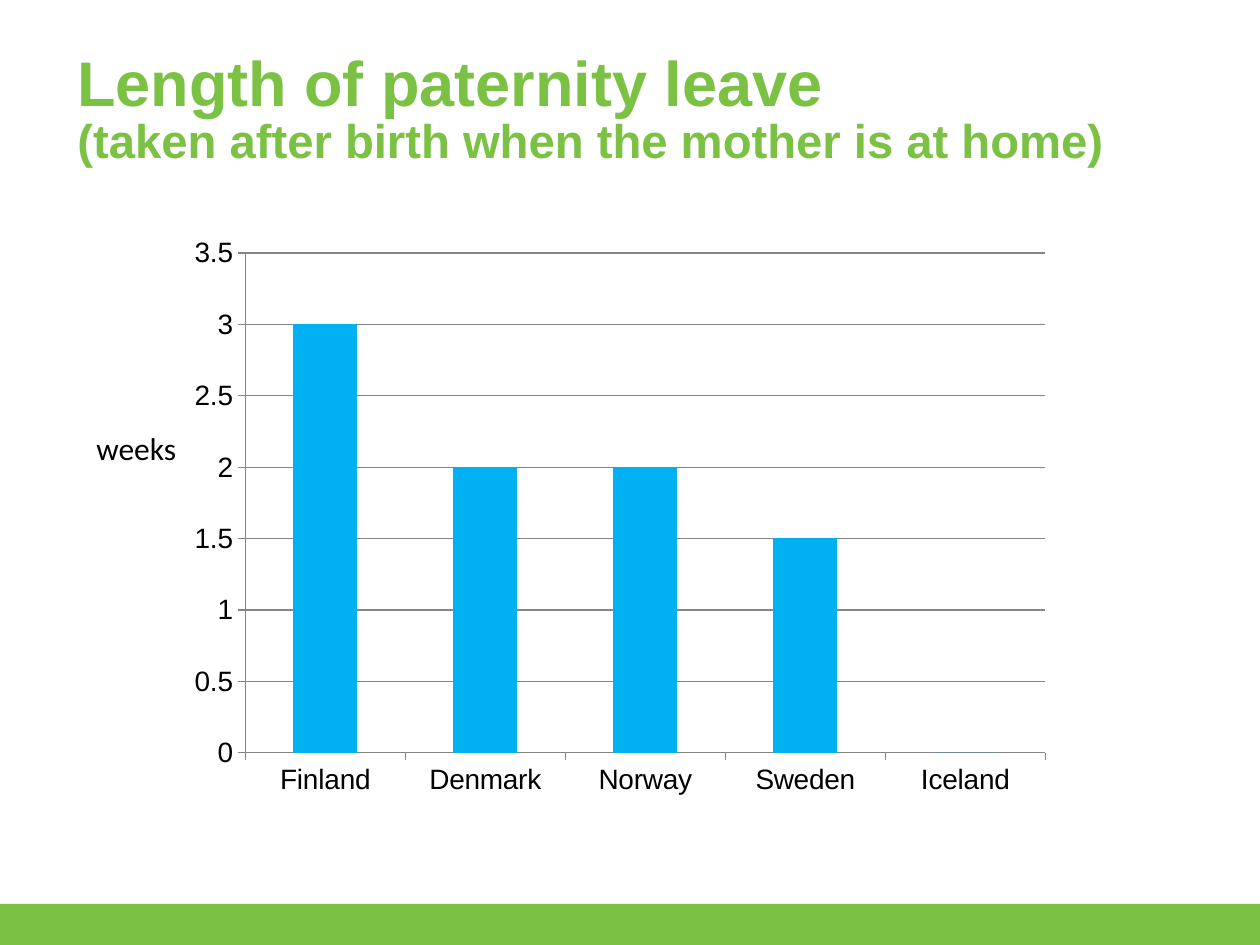
from lxml import etree
from pptx import Presentation
from pptx import util as u
from pptx.chart import data as cd
from pptx.dml.color import RGBColor
from pptx.enum import chart as ch, shapes, text
from pptx.oxml import ns

GREEN, BLUE, GREY, BLACK = "7BC143", "00B0F0", "868686", "000000"
SCALE = u.Inches(1) / 126


def px(*nums):
    """Turn pixel lengths into EMU."""
    return [u.Emu(round(n * SCALE)) for n in nums]


def color(code):
    """Return the colour for a hex string."""
    return RGBColor.from_string(code)


def style(font, size, name="Arial", tint=BLACK, bold=False):
    """Set the format of a font."""
    font.size, font.name, font.bold = u.Pt(size), name, bold
    font.color.rgb = color(tint)


def write(slide, box, lines, sizes, anchor="TOP", space=1.0, **form):
    """Add a text box whose lines form one paragraph."""
    frame = slide.shapes.add_textbox(*px(*box)).text_frame
    frame.word_wrap = True
    frame.vertical_anchor = text.MSO_ANCHOR[anchor]
    para = frame.paragraphs[0]
    para.line_spacing = space
    for i, (line, size) in enumerate(zip(lines, sizes)):
        if i:
            para.add_line_break()
        run = para.add_run()
        run.text = line
        style(run.font, size, **form)


def band(slide, box, tint):
    """Add a plain filled rectangle."""
    bar = slide.shapes.add_shape(shapes.MSO_SHAPE.RECTANGLE, *px(*box))
    bar.shadow.inherit = False
    bar.fill.solid()
    bar.fill.fore_color.rgb = color(tint)
    bar.line.fill.background()


def place(chart, **spots):
    """Fix the inner plot area as fractions of the chart."""
    plot = chart.plots[0]._element.getparent()
    for old in plot.findall(ns.qn("c:layout")):
        plot.remove(old)
    layout = etree.Element(ns.qn("c:layout"))
    plot.insert(0, layout)
    manual = etree.SubElement(layout, ns.qn("c:manualLayout"))
    parts = {"layoutTarget": "inner", "xMode": "edge", "yMode": "edge", **spots}
    for tag, val in parts.items():
        etree.SubElement(manual, ns.qn("c:" + tag)).set("val", str(val))


def rule(line):
    """Draw a chart line thin and grey."""
    line.color.rgb = color(GREY)
    line.width = u.Pt(0.75)


def columns(slide, box, cats, vals):
    """Add the column chart."""
    data = cd.CategoryChartData()
    data.categories = cats
    data.add_series("Series 1", vals)
    kind = ch.XL_CHART_TYPE.COLUMN_CLUSTERED
    chart = slide.shapes.add_chart(kind, *px(*box), data).chart
    chart.has_legend = chart.has_title = False
    style(chart.font, 10)
    plot = chart.plots[0]
    plot.gap_width = 150
    plot.vary_by_categories = False
    fill = plot.series[0].format.fill
    fill.solid()
    fill.fore_color.rgb = color(BLUE)
    for axis in (chart.category_axis, chart.value_axis):
        style(axis.tick_labels.font, 16)
        axis.major_tick_mark = ch.XL_TICK_MARK.OUTSIDE
        rule(axis.format.line)
    axis.minimum_scale, axis.maximum_scale, axis.major_unit = 0, 3.5, 0.5
    axis.has_major_gridlines = True
    rule(axis.major_gridlines.format.line)
    place(chart, x=0.076, y=0.045, w=0.903, h=0.86)


def main():
    """Build the slide."""
    deck = Presentation()
    deck.slide_width, deck.slide_height = px(1260, 945)
    slide = deck.slides.add_slide(deck.slide_layouts[6])
    band(slide, (0, 904, 1260, 41), GREEN)
    title = ["Length of paternity leave",
             "(taken after birth when the mother is at home)"]
    write(slide, (65, 35, 1131, 139), title, (36, 27), anchor="BOTTOM",
          space=0.85, tint=GREEN, bold=True)
    cats = ["Finland", "Denmark", "Norway", "Sweden", "Iceland"]
    columns(slide, (178, 227, 886, 581), cats, (3, 2, 2, 1.5, 0))
    write(slide, (84, 423, 129, 50), ["weeks"], [18], name="Calibri")
    deck.save("out.pptx")


if __name__ == "__main__":
    main()
